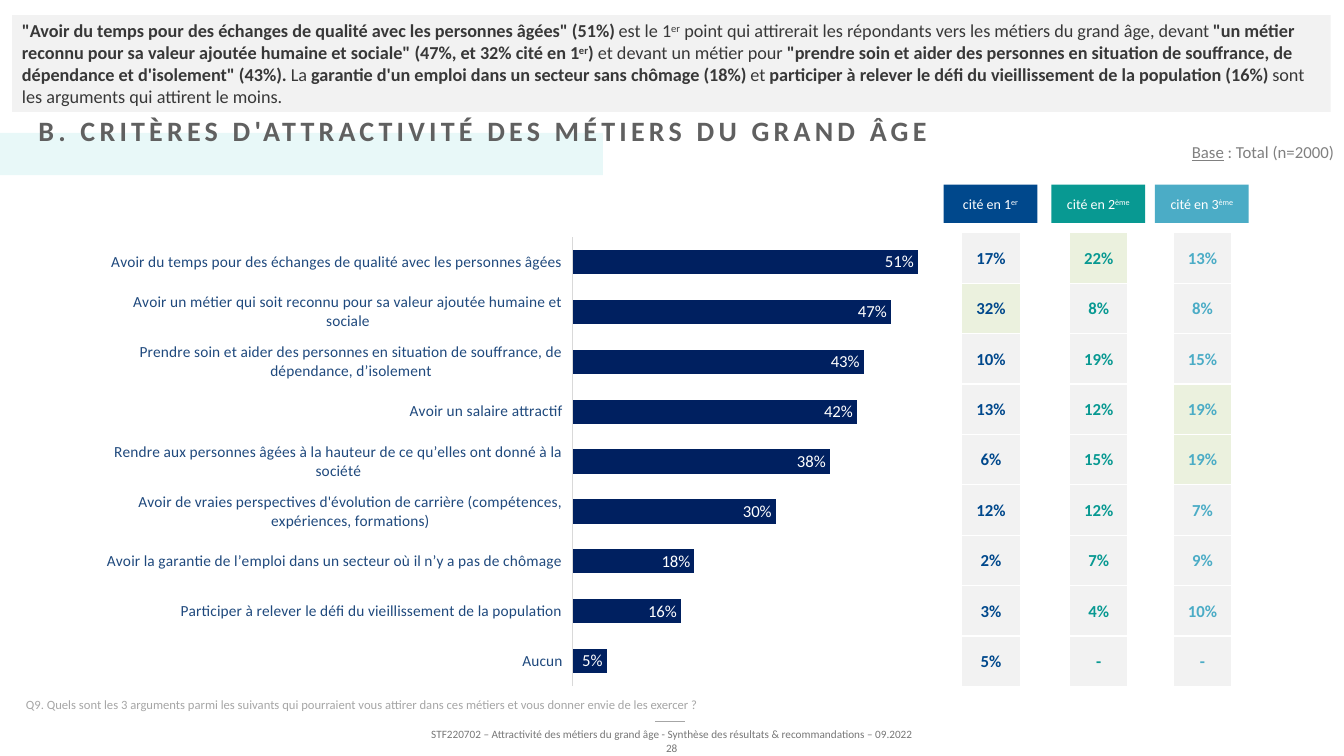
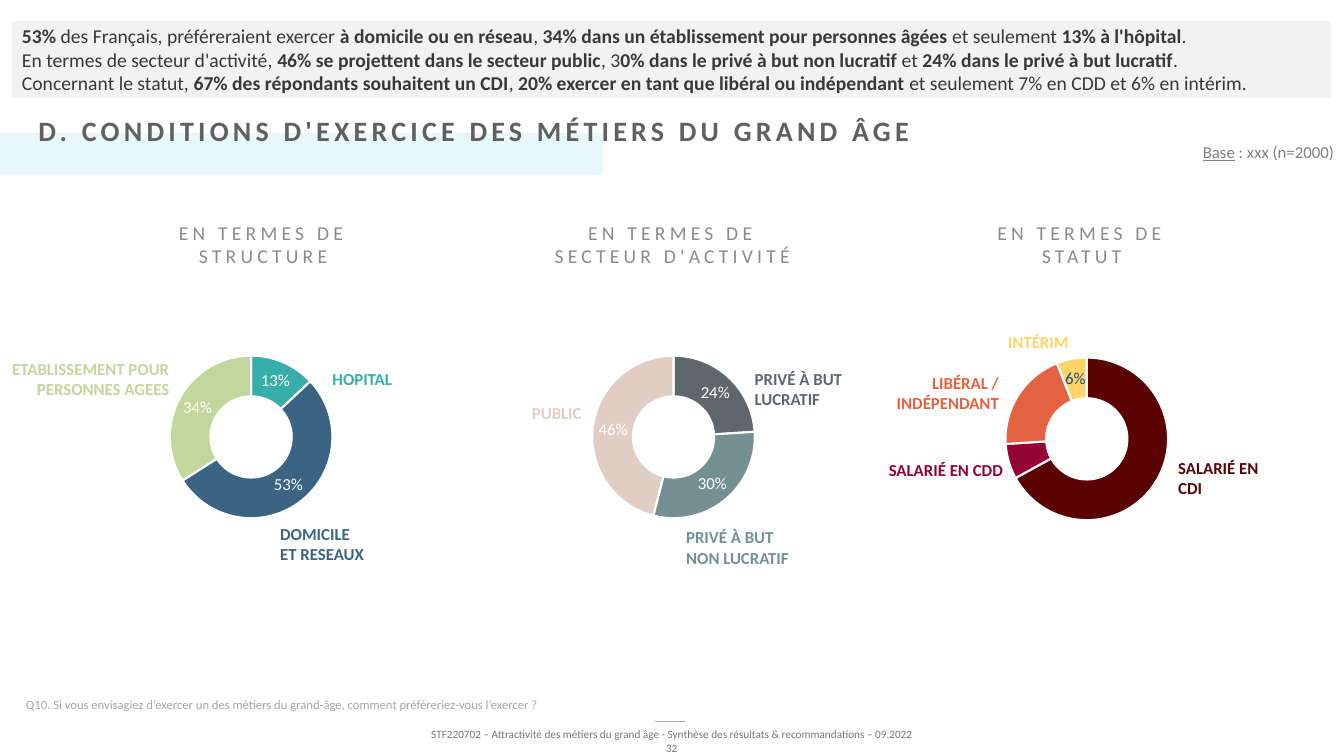
from lxml import etree
from pptx import Presentation
from pptx.chart.data import CategoryChartData
from pptx.dml.color import RGBColor
from pptx.enum.chart import XL_CHART_TYPE, XL_LABEL_POSITION, XL_TICK_LABEL_POSITION, XL_TICK_MARK
from pptx.enum.shapes import MSO_CONNECTOR, MSO_SHAPE
from pptx.enum.text import MSO_ANCHOR, MSO_AUTO_SIZE, PP_ALIGN
from pptx.oxml.ns import qn
from pptx.util import Pt

LEFT, CENTER, RIGHT = PP_ALIGN.LEFT, PP_ALIGN.CENTER, PP_ALIGN.RIGHT
TOP, MIDDLE, BOTTOM = MSO_ANCHOR.TOP, MSO_ANCHOR.MIDDLE, MSO_ANCHOR.BOTTOM
RECTANGLE, STRAIGHT = MSO_SHAPE.RECTANGLE, MSO_CONNECTOR.STRAIGHT
BAR, DOUGHNUT = XL_CHART_TYPE.BAR_CLUSTERED, XL_CHART_TYPE.DOUGHNUT
INSIDE_END, NO_TICK = XL_LABEL_POSITION.INSIDE_END, XL_TICK_MARK.NONE
LABELS_LOW, FIXED_SIZE = XL_TICK_LABEL_POSITION.LOW, MSO_AUTO_SIZE.NONE

FONT = "Calibri"
WHITE, BLACK, NAVY, INK = "FFFFFF", "000000", "002060", "383838"
BLUE, AXIS = "1F497D", "D9D9D9"
PANEL, BAND, HIGHLIGHT = "F2F2F2", "E8F8F8", "EBF1DE"
TITLE, HEADING, BASE, NOTE, FOOTER = "606060", "8B8B8B", "808080", "A6A6A6", "777777"
FOOTER_TEXT = "STF220702 – Attractivité des métiers du grand âge - Synthèse des résultats & recommandations – 09.2022"

CRITERIA = [
    ("Avoir du temps pour des échanges de qualité avec les personnes âgées", 51),
    ("Avoir un métier qui soit reconnu pour sa valeur ajoutée humaine et sociale", 47),
    ("Prendre soin et aider des personnes en situation de souffrance, de dépendance, d’isolement", 43),
    ("Avoir un salaire attractif", 42),
    ("Rendre aux personnes âgées à la hauteur de ce qu’elles ont donné à la société", 38),
    ("Avoir de vraies perspectives d'évolution de carrière (compétences, expériences, formations)", 30),
    ("Avoir la garantie de l’emploi dans un secteur où il n’y a pas de chômage", 18),
    ("Participer à relever le défi du vieillissement de la population", 16),
    ("Aucun", 5),
]

RANKS = [
    ("cité en 1^er^", "00488C", 674, [17, 32, 10, 13, 6, 12, 2, 3, 5], [1]),
    ("cité en 2^ème^", "089992", 751, [22, 8, 19, 12, 15, 12, 7, 4, None], [0]),
    ("cité en 3^ème^", "4BACC6", 825, [13, 8, 15, 19, 19, 7, 9, 10, None], [3, 4]),
]

CONDITIONS = [
    ("EN TERMES DE STRUCTURE", 67.7, 234, [
        (13, "37AEAA", "HOPITAL", 230.4, 260, 88.6, 1, LEFT),
        (53, "3B6482", "DOMICILE ET RESEAUX", 193, 370.8, 75.6, 2, LEFT),
        (34, "C3D69B", "ETABLISSEMENT POUR PERSONNES AGEES", 0.7, 252.7, 127.4, 2, RIGHT),
    ]),
    ("EN TERMES DE SECTEUR D'ACTIVITÉ", 369.4, 234, [
        (24, "5F676A", "PRIVÉ À BUT LUCRATIF", 532, 260, 88.6, 2, LEFT),
        (30, "749093", "PRIVÉ À BUT NON LUCRATIF", 483, 373, 87.8, 2, LEFT),
        (46, "E0CEC4", "PUBLIC", 295.2, 284.4, 127.4, 1, RIGHT),
    ]),
    ("EN TERMES DE STATUT", 664.6, 235.4, [
        (67, "5B0202", "SALARIÉ EN CDI", 834.5, 323.3, 88.6, 2, LEFT),
        (7, "950334", "SALARIÉ EN CDD", 627.8, 324.7, 100.8, 1, LEFT),
        (20, "E3623F", "LIBÉRAL / INDÉPENDANT", 593.3, 262.8, 127.4, 2, RIGHT),
        (6, "FFD469", "INTÉRIM", 704.2, 233.3, 66.2, 1, RIGHT),
    ]),
]


def rgb(value):
    """Turn a hex string into a colour."""
    return RGBColor.from_string(value)


class Report:
    """Hold the house style and the slide being drawn."""

    def __init__(self):
        """Open a wide, empty deck."""
        self.deck = Presentation()
        self.deck.slide_width, self.deck.slide_height = Pt(960), Pt(540)
        self.slide = None

    def start(self, title, page, base, question):
        """Add a slide with its band, title, base, question and footer."""
        self.slide = self.deck.slides.add_slide(self.deck.slide_layouts[5])
        box = self.slide.shapes.title
        box.left, box.top, box.width, box.height = Pt(20.2), Pt(77.8), Pt(689.8), Pt(31.7)
        box.text_frame.auto_size = FIXED_SIZE
        box.text_frame.vertical_anchor = TOP
        self.fill_text(box.text_frame, title, 20, TITLE, LEFT, True, 3)
        band = self.panel(0, 95, 430.6, 30.2, BAND)
        box.element.addprevious(band.element)
        self.text(f"_Base_ : {base} (n=2000)", 729, 97.9, 231, 21.6, 12, BASE, RIGHT)
        self.text(question, 11.5, 493.9, 938.9, 18, 9, NOTE, anchor=BOTTOM)
        self.rule(468, 515.5, 489.6)
        self.text(FOOTER_TEXT, 137.5, 516.2, 685.4, 17.3, 8, FOOTER, CENTER)
        self.text(page, 465.8, 526.3, 28.1, 17.3, 8, FOOTER, CENTER)

    def fill_text(self, frame, text, size, color, align=LEFT, bold=False, spacing=0):
        """Set a paragraph where *bold*, ^superscript^ and _underline_ are marked."""
        frame.word_wrap = True
        para = frame.paragraphs[0]
        para.alignment = align
        font = para.font
        font.name, font.size, font.bold = FONT, Pt(size), bold
        font.color.rgb = rgb(color)
        for number, line in enumerate(text.split("\n")):
            if number:
                para.add_line_break()
            for strong, chunk in enumerate(line.split("*")):
                for raised, piece in enumerate(chunk.split("^")):
                    for underlined, words in enumerate(piece.split("_")):
                        if words:
                            self.span(para, words, strong % 2, raised % 2, underlined % 2, spacing)

    def span(self, para, words, strong, raised, underlined, spacing):
        """Add one run with only the settings it needs."""
        span = para.add_run()
        span.text = words
        if strong:
            span.font.bold = True
        if underlined:
            span.font.underline = True
        properties = span.font._element
        if raised:
            properties.set("baseline", "30000")
        if spacing:
            properties.set("spc", str(spacing * 100))

    def text(self, text, left, top, width, height, size, color, align=LEFT,
             anchor=TOP, bold=False, spacing=0):
        """Add a text box."""
        box = self.slide.shapes.add_textbox(Pt(left), Pt(top), Pt(width), Pt(height))
        box.text_frame.vertical_anchor = anchor
        self.fill_text(box.text_frame, text, size, color, align, bold, spacing)

    def panel(self, left, top, width, height, fill, text="", size=10, color=WHITE,
              align=LEFT, margin=7.2):
        """Add a filled rectangle, with text if any."""
        box = self.slide.shapes.add_shape(RECTANGLE, Pt(left), Pt(top), Pt(width), Pt(height))
        box.shadow.inherit = False
        box.fill.solid()
        box.fill.fore_color.rgb = rgb(fill)
        box.line.fill.background()
        if text:
            frame = box.text_frame
            frame.vertical_anchor = MIDDLE
            frame.margin_left = frame.margin_right = Pt(margin)
            frame.margin_top = frame.margin_bottom = Pt(margin)
            self.fill_text(frame, text, size, color, align)
        return box

    def rule(self, left, top, right):
        """Add a thin level line."""
        line = self.slide.shapes.add_connector(STRAIGHT, Pt(left), Pt(top), Pt(right), Pt(top))
        line.line.color.rgb = rgb(NOTE)
        line.line.width = Pt(1)
        etree.SubElement(line.element.spPr, qn("a:effectLst"))

    def column(self, left, top, values, color, highlighted):
        """Add a one-column table of percentages."""
        frame = self.slide.shapes.add_table(len(values), 1, Pt(left), Pt(top),
                                            Pt(41.8), Pt(36 * len(values)))
        table = frame.table
        table.first_row = table.horz_banding = False
        for row, value in enumerate(values):
            cell = table.cell(row, 0)
            cell.vertical_anchor = MIDDLE
            cell.margin_left = cell.margin_right = cell.margin_top = Pt(0.72)
            cell.margin_bottom = 0
            self.borders(cell)
            cell.fill.solid()
            cell.fill.fore_color.rgb = rgb(HIGHLIGHT if row in highlighted else PANEL)
            label = "-" if value is None else f"{value}%"
            self.fill_text(cell.text_frame, label, 12, color, CENTER, True)

    def borders(self, cell):
        """Give a cell white edges."""
        properties = cell._tc.get_or_add_tcPr()
        for edge in ("a:lnL", "a:lnR", "a:lnT", "a:lnB"):
            line = etree.SubElement(properties, qn(edge), w=str(Pt(1)))
            fill = etree.SubElement(line, qn("a:solidFill"))
            etree.SubElement(fill, qn("a:srgbClr"), val=WHITE)

    def chart(self, kind, left, top, width, height, names, values, layout):
        """Add a one-series percentage chart with a fixed plot area."""
        data = CategoryChartData(number_format="0%")
        data.categories = names
        data.add_series("Series 1", [value / 100 for value in values])
        chart = self.slide.shapes.add_chart(kind, Pt(left), Pt(top), Pt(width), Pt(height), data).chart
        chart.has_legend = chart.has_title = False
        self.style(chart.font, 10, BLACK)
        plot = chart.plots[0]
        plot.vary_by_categories = kind == DOUGHNUT
        plot.has_data_labels = True
        labels = plot.data_labels
        labels.show_value, labels.show_percentage = True, False
        labels.number_format, labels.number_format_is_linked = "0%", False
        self.style(labels.font, 12, WHITE)
        self.place_plot(chart, layout)
        return chart

    def style(self, font, size, color):
        """Format the text of a chart part."""
        font.name, font.size = FONT, Pt(size)
        font.color.rgb = rgb(color)

    def place_plot(self, chart, layout):
        """Fix the inner plot area as shares of the chart."""
        area = chart.element.find(".//" + qn("c:plotArea"))
        for old in area.findall(qn("c:layout")):
            area.remove(old)
        holder = etree.Element(qn("c:layout"))
        area.insert(0, holder)
        manual = etree.SubElement(holder, qn("c:manualLayout"))
        settings = [("layoutTarget", "inner"), ("xMode", "edge"), ("yMode", "edge")]
        for name, value in settings + list(zip("xywh", layout)):
            etree.SubElement(manual, qn("c:" + name), val=str(value))

    def bars(self, rows, left, top, width, height):
        """Add the horizontal bar chart."""
        names, values = zip(*rows)
        chart = self.chart(BAR, left, top, width, height, names, values, (0.494, 0.032, 0.433, 0.936))
        plot = chart.plots[0]
        plot.gap_width = 106
        plot.data_labels.position = INSIDE_END
        fill = plot.series[0].format.fill
        fill.solid()
        fill.fore_color.rgb = rgb(NAVY)
        axis = chart.category_axis
        axis.reverse_order = True
        axis.major_tick_mark = axis.minor_tick_mark = NO_TICK
        axis.tick_label_position = LABELS_LOW
        axis.format.line.color.rgb = rgb(AXIS)
        axis.format.line.width = Pt(0.75)
        self.style(axis.tick_labels.font, 11, BLUE)
        scale = chart.value_axis
        scale.minimum_scale, scale.maximum_scale = 0, 0.6
        scale.has_major_gridlines = scale.visible = False

    def ring(self, left, top, values, colors):
        """Add a doughnut chart and return its points."""
        names = [str(number + 1) for number in range(len(values))]
        chart = self.chart(DOUGHNUT, left, top, 212.4, 145.4, names, values, (0.252, 0.138, 0.548, 0.799))
        chart.element.find(".//" + qn("c:holeSize")).set("val", "60")
        points = chart.plots[0].series[0].points
        for number, color in enumerate(colors):
            shape = points[number].format
            shape.fill.solid()
            shape.fill.fore_color.rgb = rgb(color)
            shape.line.color.rgb = rgb(WHITE)
            shape.line.width = Pt(1.5)
        return points


def draw_criteria(report):
    """Draw the slide on what attracts people."""
    report.start("B. CRITÈRES D'ATTRACTIVITÉ DES MÉTIERS DU GRAND ÂGE", "28", "Total",
                 "Q9. Quels sont les 3 arguments parmi les suivants qui pourraient vous attirer "
                 "dans ces métiers et vous donner envie de les exercer ?")
    report.panel(8.6, 10.8, 941.8, 69.1, PANEL,
                 '*"Avoir du temps pour des échanges de qualité avec les personnes âgées" (51%) *'
                 "est le 1^er^ point qui attirerait les répondants vers les métiers du grand âge, devant "
                 '*"un métier reconnu pour sa valeur ajoutée humaine et sociale" (47%, et 32% cité en 1^er^) *'
                 'et devant un métier pour *"prendre soin et aider des personnes en situation de souffrance, '
                 "de dépendance et d'isolement\" (43%). *La *garantie d'un emploi dans un secteur sans "
                 "chômage (18%) *et *participer à relever le défi du vieillissement de la population (16%) *"
                 "sont les arguments qui attirent le moins.", 13, INK)
    report.bars(CRITERIA, 76.3, 158.4, 671.8, 342.7)
    for label, color, left, values, highlighted in RANKS:
        report.panel(left, 131.8, 67, 27.4, color, label, align=CENTER, margin=0)
        report.column(left + 13, 166.3, values, color, highlighted)


def draw_conditions(report):
    """Draw the slide on preferred working conditions."""
    report.start("D. CONDITIONS D'EXERCICE DES MÉTIERS DU GRAND ÂGE", "32", "xxx",
                 "Q10. Si vous envisagiez d’exercer un des métiers du grand-âge, "
                 "comment préféreriez-vous l’exercer ?")
    report.panel(8.6, 15.1, 941.8, 54.7, PANEL,
                 "*53%* des Français, préféreraient exercer *à domicile ou en réseau*, "
                 "*34% dans un établissement pour personnes âgées* et seulement *13% à l'hôpital*.\n"
                 "En termes de secteur d'activité, *46% se projettent dans le secteur public*, "
                 "3*0% dans le privé à but non lucratif *et *24% dans le privé à but lucratif*.\n"
                 "Concernant le statut, *67% des répondants souhaitent un CDI*, *20% exercer en tant que "
                 "libéral ou indépendant *et seulement 7% en CDD et 6% en intérim.", 14, INK)
    for number, (heading, left, top, slices) in enumerate(CONDITIONS):
        report.text(heading, 92.2 + 292.3 * number, 154.1, 191.5, 41.8, 14, HEADING, CENTER, spacing=3)
        points = report.ring(left, top, [part[0] for part in slices], [part[1] for part in slices])
        for _, color, label, x, y, width, lines, align in slices:
            report.text(label, x, y, width, 7.2 + 14.4 * lines, 12, color, align, bold=True)
    report.style(points[3].data_label.font, 12, BLUE)


def main():
    """Build and save the deck."""
    report = Report()
    draw_criteria(report)
    draw_conditions(report)
    report.deck.save("out.pptx")


if __name__ == "__main__":
    main()
